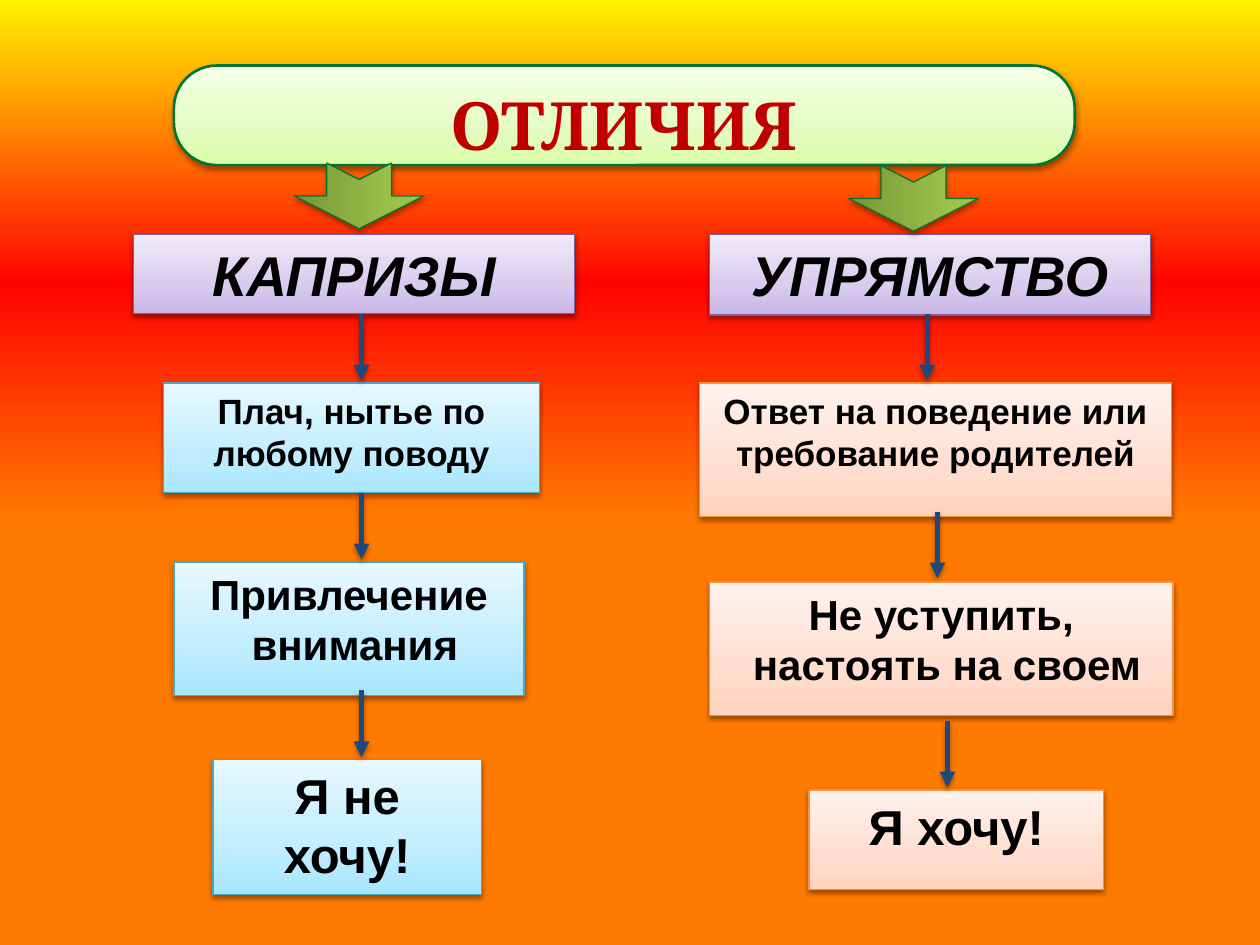
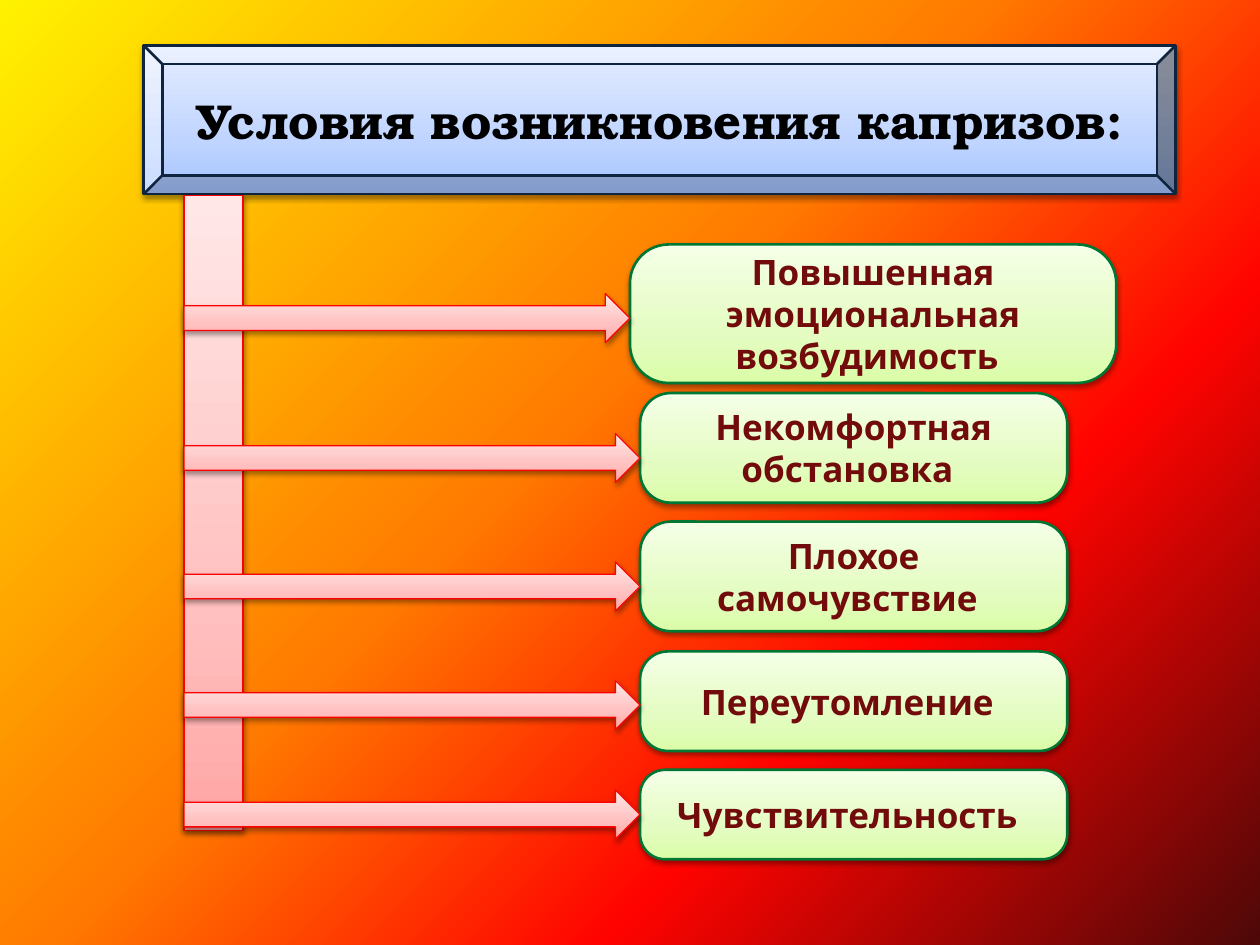
from dataclasses import dataclass

from lxml.etree import SubElement
from pptx import Presentation
from pptx.dml.color import RGBColor
from pptx.enum.shapes import MSO_CONNECTOR, MSO_SHAPE
from pptx.enum.text import MSO_ANCHOR, PP_ALIGN
from pptx.oxml.ns import qn
from pptx.util import Inches, Pt

COLORS = {
    "orange": "FF7A00",
    "red": "FF0300",
    "yellow": "FFF200",
    "maroon": "4D0808",
    "black": "000000",
    "title_red": "C00000",
    "title_outline": "002060",
    "reason": "720C0C",
    "link": "1F497D",
}


@dataclass(frozen=True)
class Look:
    """Vertical gradient, outline and shadow strength of a shape."""
    stops: tuple[tuple[int, str], ...]
    line: str
    line_width: float = 0.75
    shadow_alpha: int = 38


@dataclass(frozen=True)
class Panel:
    """A preset shape with its place and optional text, one line a paragraph."""
    left: float
    top: float
    width: float
    height: float
    look: Look
    text: str = ""
    size: int = 20
    kind: MSO_SHAPE = MSO_SHAPE.RECTANGLE
    corner: float | None = None
    rotation: int = 0


GREEN = Look(((0, "DAFDA7"), (35, "E4FCC2"), (100, "F5FFE7")), "007635", 1.5)
VIOLET = Look(((0, "C9B5E8"), (35, "D8CBEE"), (100, "F0EAF9")), "7D60A0")
SKY = Look(((0, "A7E6FF"), (35, "C1EDFF"), (100, "E7F8FF")), "46AAC5")
PEACH = Look(((0, "FFD2BD"), (35, "FFDED0"), (100, "FFF2ED")), "F69240")
OLIVE = Look(((0, "779737"), (80, "9BC348"), (100, "9DC746")), "007635",
             shadow_alpha=35)
BLUE = Look(((0, "A4C4FF"), (35, "BFD4FF"), (100, "E6EEFF")), "0F243E", 1.5)
PINK = Look(((0, "FFA6A5"), (35, "FFC0BF"), (100, "FFE7E7")), "FF0000")

# Text formats
HEADING = {"name": "Cambria", "bold": True}
BRANCH = {"name": "Arial", "bold": True, "italic": True}
STEP = {"name": "Arial", "bold": True}
CONDITIONS = {"name": "TeX Gyre Bonum", "bold": True}
REASON = {"name": "Comic Neue", "bold": True}


def set_gradient(fill, root, stops: tuple, angle: int) -> None:
    """Fill with a linear gradient; the angle runs clockwise."""
    fill.gradient()
    fill.gradient_angle = 360 - angle
    stop_list = next(root.iter(qn("a:gsLst")))
    for old_stop in list(stop_list):
        stop_list.remove(old_stop)
    for position, color in stops:
        stop = SubElement(stop_list, qn("a:gs"), pos=str(position * 1000))
        SubElement(stop, qn("a:srgbClr"), val=color)


def add_shadow(effects, alpha: int) -> None:
    distance = "20000" if alpha == 38 else "23000"
    shadow = SubElement(effects, qn("a:outerShdw"), blurRad="40000",
                        dist=distance, dir="5400000", rotWithShape="0")
    color = SubElement(shadow, qn("a:srgbClr"), val=COLORS["black"])
    SubElement(color, qn("a:alpha"), val=str(alpha * 1000))


def write_text(shape, panel: Panel, style: dict, color: str,
               anchor: MSO_ANCHOR) -> None:
    frame = shape.text_frame
    frame.word_wrap = True
    frame.vertical_anchor = anchor
    frame.text = panel.text
    for paragraph in frame.paragraphs:
        paragraph.alignment = PP_ALIGN.CENTER
        for run in paragraph.runs:
            for key, value in {**style, "size": Pt(panel.size)}.items():
                setattr(run.font, key, value)
            run.font.color.rgb = RGBColor.from_string(COLORS[color])


def draw_panel(slide, panel: Panel, style: dict | None = None,
               color: str = "black", anchor: MSO_ANCHOR = MSO_ANCHOR.TOP):
    shape = slide.shapes.add_shape(
        panel.kind, Inches(panel.left), Inches(panel.top),
        Inches(panel.width), Inches(panel.height))
    shape.rotation = panel.rotation
    if panel.corner is not None:
        shape.adjustments[0] = panel.corner
    properties = shape._element.spPr
    set_gradient(shape.fill, properties, panel.look.stops, 270)
    shape.line.color.rgb = RGBColor.from_string(panel.look.line)
    shape.line.width = Pt(panel.look.line_width)
    shape.shadow.inherit = False
    add_shadow(properties.find(qn("a:effectLst")), panel.look.shadow_alpha)
    if panel.text:
        write_text(shape, panel, style or {}, color, anchor)
    return shape


def draw_link(slide, x: float, top: float, length: float = 0.53) -> None:
    link = slide.shapes.add_connector(
        MSO_CONNECTOR.STRAIGHT, Inches(x), Inches(top),
        Inches(x), Inches(top + length))
    link.line.color.rgb = RGBColor.from_string(COLORS["link"])
    link.line.width = Pt(3)
    SubElement(link.line._get_or_add_ln(), qn("a:tailEnd"), type="triangle")
    add_shadow(SubElement(link._element.spPr, qn("a:effectLst")), 35)


def add_slide(deck, stops: tuple, angle: int):
    slide = deck.slides.add_slide(deck.slide_layouts[6])
    set_gradient(slide.background.fill, slide._element,
                 tuple((at, COLORS[name]) for at, name in stops), angle)
    return slide


def outline_text(shape, color: str, width: float) -> None:
    run_format = shape.text_frame.paragraphs[0].runs[0]._r.get_or_add_rPr()
    outline = SubElement(run_format, qn("a:ln"), w=str(Pt(width)))
    fill = SubElement(outline, qn("a:solidFill"))
    SubElement(fill, qn("a:srgbClr"), val=COLORS[color])
    run_format.insert(0, outline)


def build_differences(deck) -> None:
    slide = add_slide(deck, ((0, "orange"), (45, "orange"), (70, "red"),
                             (100, "yellow")), 270)
    # Heading
    heading = draw_panel(
        slide, Panel(1.38, 0.52, 7.15, 0.79, GREEN, "ОТЛИЧИЯ", 38,
                     MSO_SHAPE.ROUNDED_RECTANGLE, 0.43), HEADING, "title_red")
    outline_text(heading, "title_outline", 1.42)

    # Two branches
    for branch in (Panel(1.06, 1.86, 3.5, 0.63, VIOLET, "КАПРИЗЫ", 32),
                   Panel(5.63, 1.86, 3.5, 0.64, VIOLET, "УПРЯМСТВО", 32)):
        draw_panel(slide, branch, BRANCH)

    # Steps of each branch
    steps = (
        Panel(1.3, 3.04, 2.98, 0.87, SKY, "Плач, нытье по любому поводу"),
        Panel(1.38, 4.46, 2.78, 1.06, SKY, "Привлечение\n внимания", 24),
        Panel(1.69, 6.03, 2.13, 1.07, SKY, "Я не хочу!", 28),
        Panel(5.55, 3.04, 3.75, 1.06, PEACH,
              "Ответ на поведение или требование родителей"),
        Panel(5.63, 4.62, 3.68, 1.06, PEACH,
              "Не уступить,\n настоять на своем", 24),
        Panel(6.42, 6.27, 2.34, 0.79, PEACH, "Я хочу!", 28),
    )
    for step in steps:
        draw_panel(slide, step, STEP)

    # Block arrows from the heading to the branches
    for left, top in ((2.59, 1.04), (6.99, 1.06)):
        draw_panel(slide, Panel(left, top, 0.52, 1.03, OLIVE, rotation=90,
                                kind=MSO_SHAPE.NOTCHED_RIGHT_ARROW))

    # Links between the steps
    for x, top in ((2.87, 2.49), (2.87, 3.91), (2.87, 5.48),
                   (7.36, 2.49), (7.44, 4.06), (7.52, 5.72)):
        draw_link(slide, x, top)


def build_conditions(deck) -> None:
    slide = add_slide(deck, ((0, "yellow"), (45, "orange"), (70, "red"),
                             (100, "maroon")), 45)
    # Heading
    draw_panel(slide, Panel(1.14, 0.36, 8.19, 1.18, BLUE,
                            "Условия возникновения капризов:", 28,
                            MSO_SHAPE.BEVEL),
               CONDITIONS, anchor=MSO_ANCHOR.MIDDLE)

    # Reasons: left, top, width, height, text, top of the arrow
    reasons = (
        (5, 1.94, 3.86, 1.1, "Повышенная эмоциональная возбудимость ", 2.33),
        (5.08, 3.12, 3.39, 0.87, "Некомфортная обстановка ", 3.44),
        (5.08, 4.14, 3.39, 0.87, "Плохое самочувствие ", 4.46),
        (5.08, 5.17, 3.39, 0.79, "Переутомление ", 5.4),
        (5.08, 6.11, 3.39, 0.71, "Чувствительность ", 6.27),
    )
    for left, top, width, height, text, _ in reasons:
        draw_panel(slide, Panel(left, top, width, height, GREEN, text, 20,
                                MSO_SHAPE.ROUNDED_RECTANGLE, 0.28),
                   REASON, "reason", MSO_ANCHOR.MIDDLE)

    # Trunk, and an arrow from it to each reason
    trunk = Panel(1.46, 1.55, 0.47, 5.04, PINK)
    draw_panel(slide, trunk)
    for left, *_, arrow_top in reasons:
        draw_panel(slide, Panel(trunk.left, arrow_top, left - trunk.left, 0.39,
                                PINK, kind=MSO_SHAPE.RIGHT_ARROW))


def main() -> None:
    deck = Presentation()
    deck.slide_width = Inches(10)
    deck.slide_height = Inches(7.5)
    build_differences(deck)
    build_conditions(deck)
    deck.save("out.pptx")


if __name__ == "__main__":
    main()
